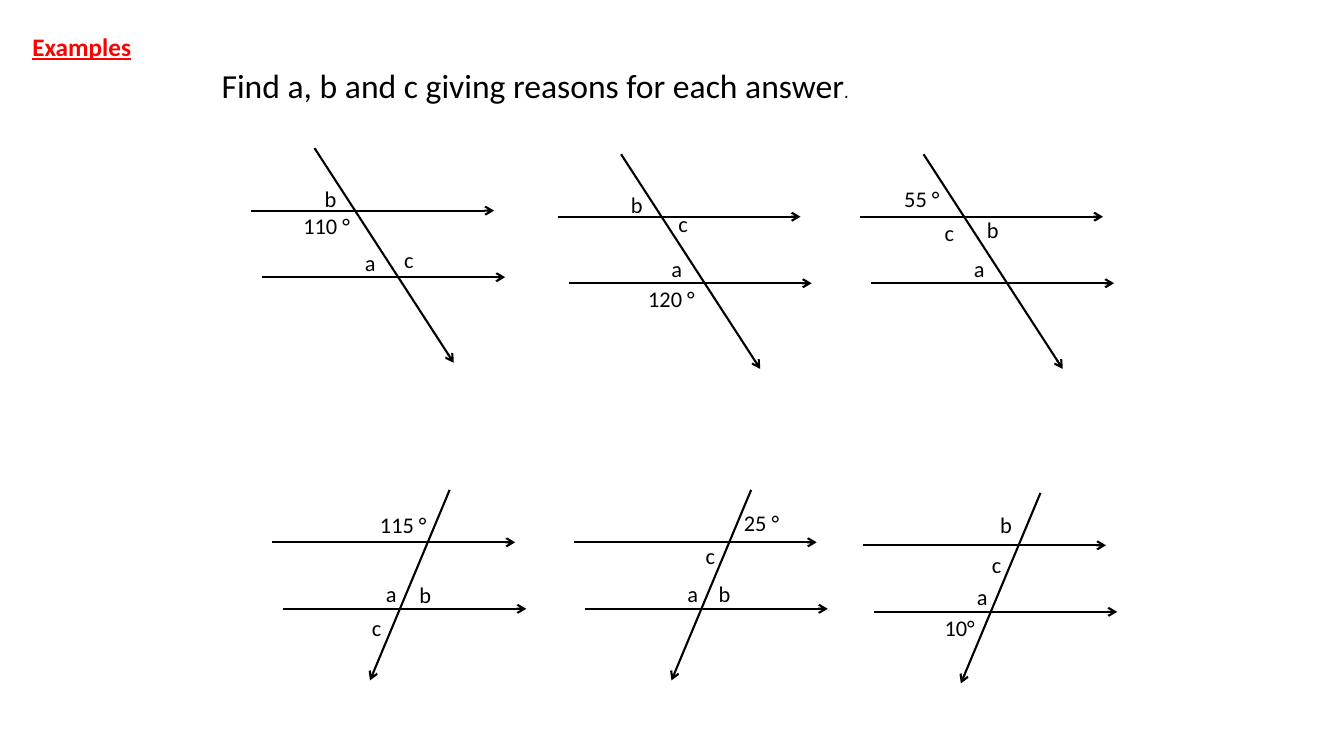
from dataclasses import dataclass

from lxml import etree
from pptx import Presentation
from pptx.dml.color import RGBColor
from pptx.enum.shapes import MSO_CONNECTOR
from pptx.enum.text import MSO_ANCHOR, MSO_AUTO_SIZE, PP_ALIGN
from pptx.oxml.ns import qn
from pptx.util import Inches, Pt

STRAIGHT = MSO_CONNECTOR.STRAIGHT
TOP, LEFT = MSO_ANCHOR.TOP, PP_ALIGN.LEFT
FIT_SHAPE = MSO_AUTO_SIZE.SHAPE_TO_FIT_TEXT
TITLE_ONLY = 5


@dataclass(frozen=True)
class Theme:
    ink: RGBColor = RGBColor(0, 0, 0)
    accent: RGBColor = RGBColor(255, 0, 0)
    font: str = "Calibri"
    stop_font: str = "Comic Neue"
    title: Pt = Pt(18)
    task: Pt = Pt(24)
    stop: Pt = Pt(20)
    label: Pt = Pt(16)
    line: Pt = Pt(1.5)


THEME = Theme()

# Offsets from the left end of the upper parallel line
PARALLELS = [(0, 0, 2.41, 0), (0.11, 0.66, 2.52, 0.66)]
FALLING = (0.63, -0.62, 2.01, 1.51)
RISING = (1.76, -0.52, 0.97, 1.37)
A_OFFSET = (1.03, 0.33)
LABEL_HEIGHT = 0.37
WIDTH_BY_LENGTH = {1: 0.32, 3: 0.51, 4: 0.56, 5: 0.68}

# Left, top, transversal, angle labels other than a
DIAGRAMS = [
    (2.49, 2.09, FALLING,
     {"b": (0.63, -0.3), "110 °": (0.42, -0.03), "c": (1.42, 0.3)}),
    (5.53, 2.15, FALLING,
     {"b": (0.63, -0.3), "c": (1.1, -0.11), "120 °": (0.8, 0.63)}),
    (8.53, 2.15, FALLING,
     {"b": (1.16, -0.05), "c": (0.74, -0.03), "55 °": (0.34, -0.36)}),
    (2.7, 5.38, RISING,
     {"115 °": (0.97, -0.36), "b": (1.36, 0.34), "c": (0.89, 0.66)}),
    (5.69, 5.38, RISING,
     {"b": (1.34, 0.33), "c": (1.21, -0.05), "25 °": (1.59, -0.38)}),
    (8.56, 5.41, RISING,
     {"b": (1.26, -0.39), "c": (1.18, 0.01), "10°": (0.71, 0.63)}),
]


def style(font, size, color=THEME.ink, name=THEME.font):
    font.name, font.size = name, size
    font.color.rgb = color


def add_arrow(slide, x1, y1, x2, y2):
    line = slide.shapes.add_connector(
        STRAIGHT, Inches(x1), Inches(y1), Inches(x2), Inches(y2))
    line.line.color.rgb = THEME.ink
    line.line.width = THEME.line
    etree.SubElement(line.line._get_or_add_ln(), qn("a:tailEnd"), type="arrow")
    etree.SubElement(line._element.spPr, qn("a:effectLst"))


def add_text(slide, text, left, top, width, height, size):
    """Add an unwrapped text box and return its paragraph."""
    box = slide.shapes.add_textbox(
        Inches(left), Inches(top), Inches(width), Inches(height))
    tf = box.text_frame
    tf.word_wrap = False
    tf.auto_size = FIT_SHAPE
    p = tf.paragraphs[0]
    p.text = text
    style(p.font, size)
    return p


def add_title(slide, left, top, width, height):
    sp = slide.shapes.title
    sp.left, sp.top = Inches(left), Inches(top)
    sp.width, sp.height = Inches(width), Inches(height)
    tf = sp.text_frame
    tf.text = "Examples"
    tf.vertical_anchor = TOP
    tf.word_wrap = True
    tf.auto_size = FIT_SHAPE
    p = tf.paragraphs[0]
    p.alignment = LEFT
    style(p.font, THEME.title, THEME.accent)
    p.font.bold = p.font.underline = True


def add_task(slide, left, top, width, height):
    p = add_text(slide, "Find a, b and c giving reasons for each answer",
                 left, top, width, height, THEME.task)
    r = p.add_run()
    r.text = "."
    style(r.font, THEME.stop, name=THEME.stop_font)


def add_diagram(slide, left, top, transversal, labels):
    """Draw two parallel lines, the line crossing them and the angle labels."""
    for x1, y1, x2, y2 in [*PARALLELS, transversal]:
        add_arrow(slide, left + x1, top + y1, left + x2, top + y2)
    for text, (dx, dy) in {"a": A_OFFSET, **labels}.items():
        add_text(slide, text, left + dx, top + dy,
                 WIDTH_BY_LENGTH[len(text)], LABEL_HEIGHT, THEME.label)


def main():
    prs = Presentation()
    prs.slide_width, prs.slide_height = Inches(13.33), Inches(7.5)
    slide = prs.slides.add_slide(prs.slide_layouts[TITLE_ONLY])
    add_title(slide, 0.22, 0.26, 1.58, 0.4)
    add_task(slide, 2.1, 0.59, 6.43, 0.5)
    for diagram in DIAGRAMS:
        add_diagram(slide, *diagram)
    prs.save("out.pptx")


if __name__ == "__main__":
    main()
